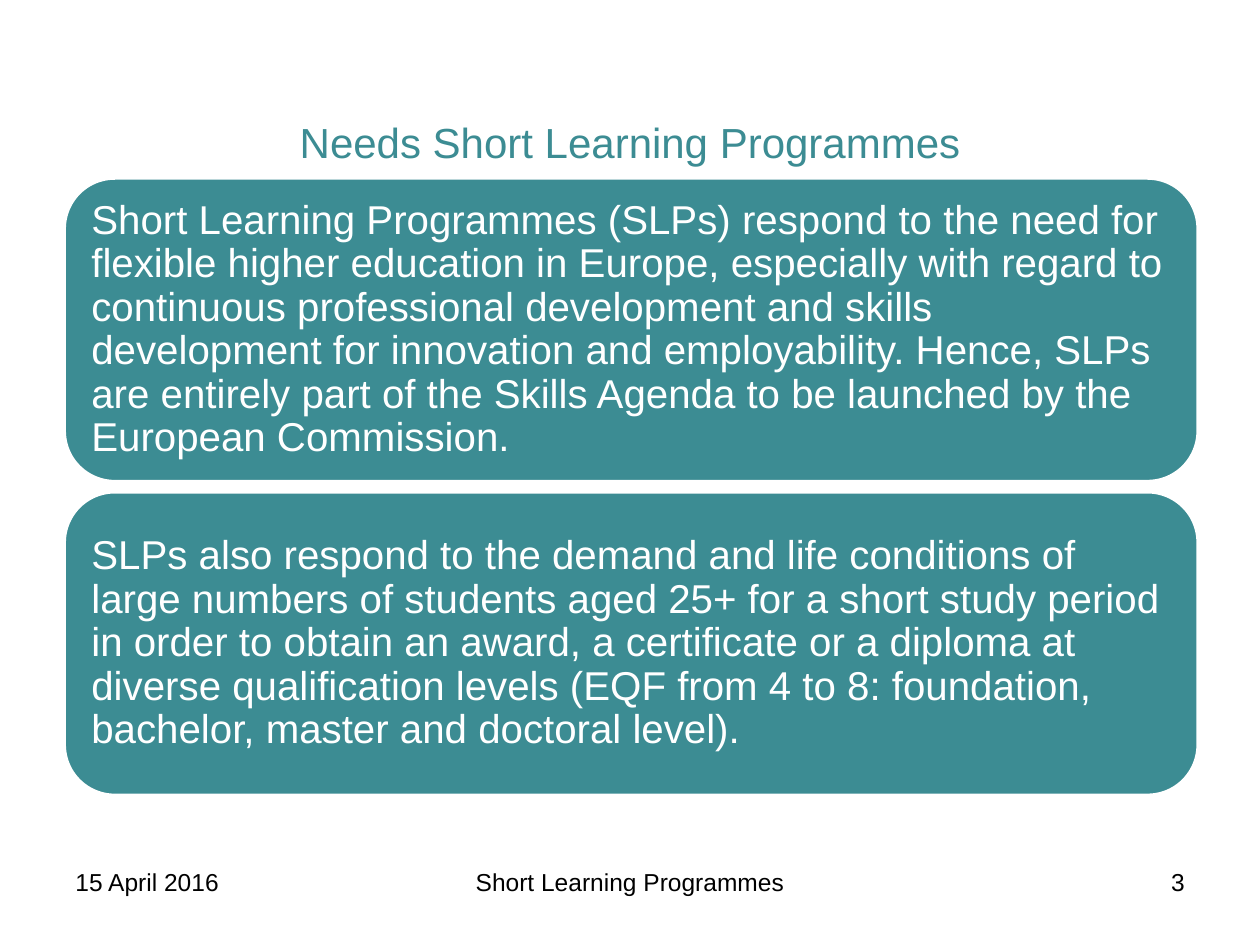
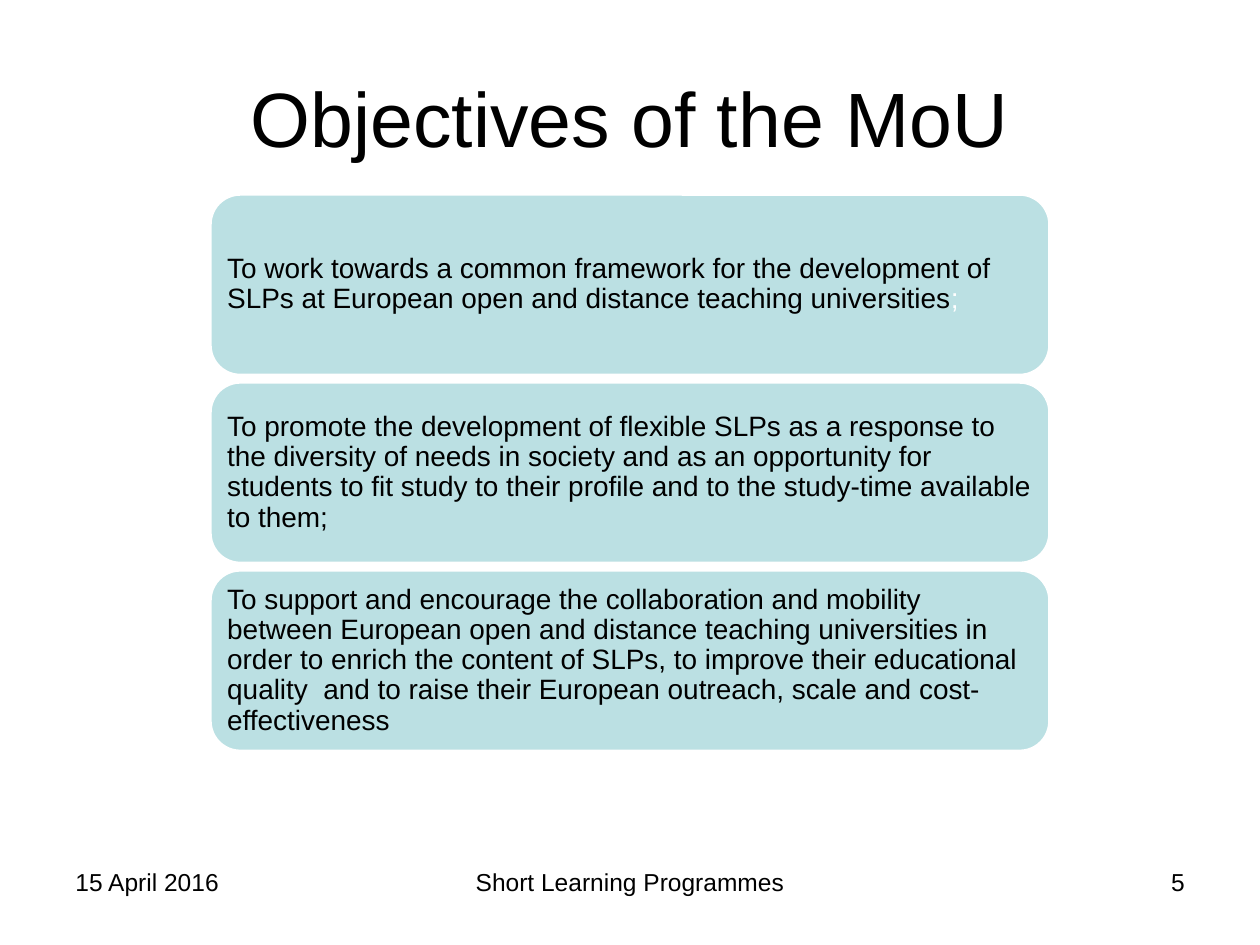
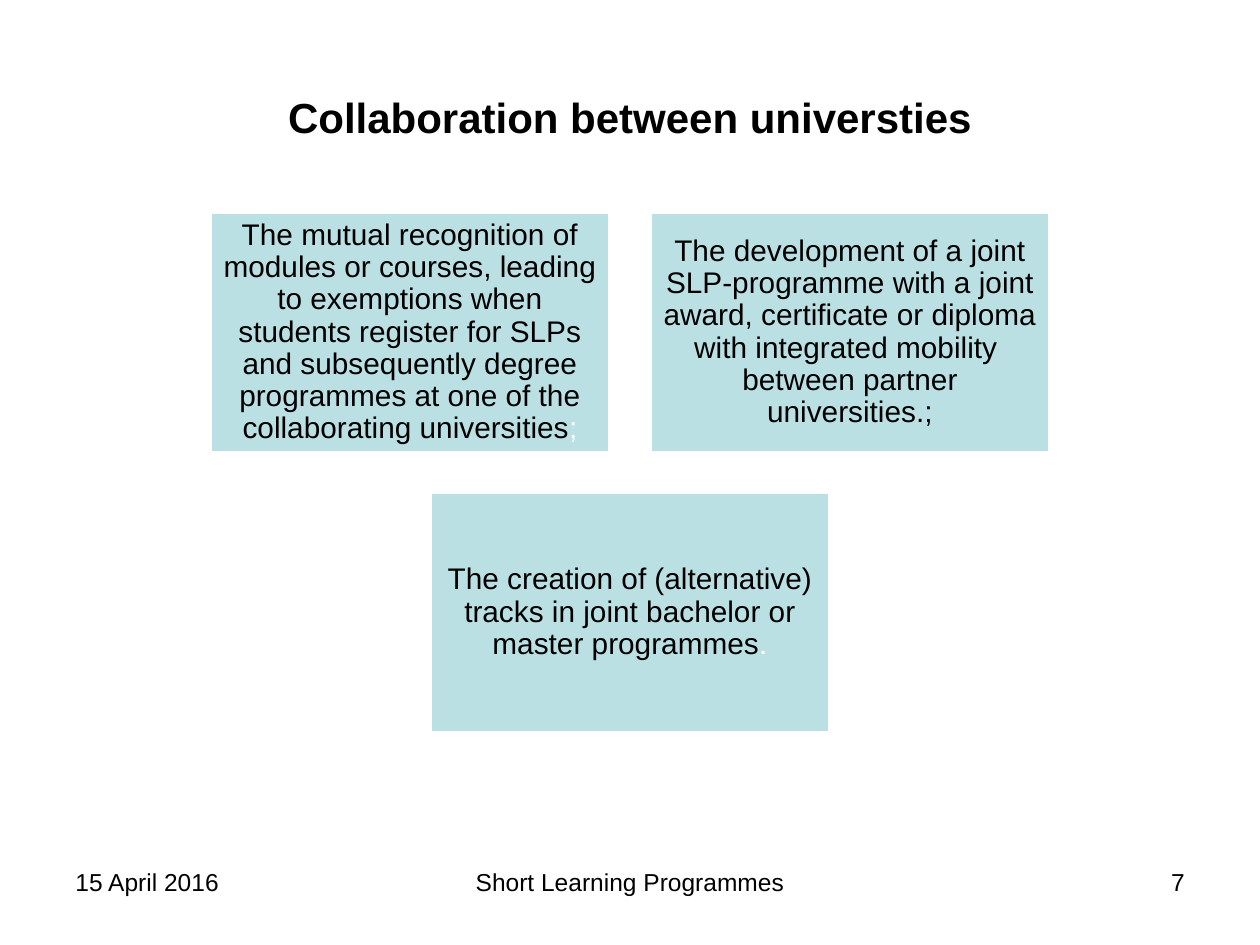
"""Build three slides on Short Learning Programmes with python-pptx."""
from pptx import Presentation
from pptx.dml.color import RGBColor
from pptx.enum.shapes import MSO_SHAPE as Preset
from pptx.enum.text import MSO_ANCHOR as Anchor, MSO_AUTO_SIZE as AutoSize, PP_ALIGN as Align
from pptx.util import Pt

TEAL = RGBColor(0x3C, 0x8C, 0x93)
PALE_TEAL = RGBColor(0xBB, 0xE0, 0xE3)
WHITE = RGBColor(0xFF, 0xFF, 0xFF)
BLACK = RGBColor(0x00, 0x00, 0x00)

FONT = "Arial"
SLIDE_WIDTH, SLIDE_HEIGHT = 720, 540
MARGIN = 36
TITLE_ONLY = 5

NEEDS = [
    [("Short Learning Programmes (SLPs) respond to the need for flexible higher "
      "education in Europe, especially with regard to continuous professional "
      "development and skills development for innovation and employability. Hence, "
      "SLPs are entirely part of the Skills Agenda to be launched by the European "
      "Commission.", WHITE)],
    [("SLPs also respond to the demand and life conditions of large numbers of "
      "students aged 25+ for a short study period in order to obtain an award, a "
      "certificate or a diploma at diverse qualification levels (EQF from 4 to 8: "
      "foundation, bachelor, master and doctoral level).", WHITE)],
]
OBJECTIVES = [
    [("To work towards a common framework for the development of SLPs at European "
      "open and distance teaching universities", BLACK), (";", WHITE)],
    [("To promote the development of flexible SLPs as a response to the diversity of "
      "needs in society and as an opportunity for students to fit study to their "
      "profile and to the study-time available to them;", BLACK)],
    [("To support and encourage the collaboration and mobility between European open "
      "and distance teaching universities in order to enrich the content of SLPs, to "
      "improve their educational quality  and to raise their European outreach, scale "
      "and cost-effectiveness", BLACK)],
]
COLLABORATION = [
    [("The mutual recognition of modules or courses, leading to exemptions when "
      "students register for SLPs and subsequently degree programmes at one of the "
      "collaborating universities", BLACK), (";", WHITE)],
    [("The development of a joint SLP-programme with a joint award, certificate or "
      "diploma with integrated mobility  between partner universities.;", BLACK)],
    [("The creation of (alternative) tracks in joint bachelor or master programmes",
      BLACK), (".", WHITE)],
]


def add_run(paragraph, text, size, color, bold=False):
    """Append one formatted run to a paragraph."""
    run = paragraph.add_run()
    run.text = text
    font = run.font
    font.name, font.size, font.bold = FONT, Pt(size), bold
    font.color.rgb = color


def add_title(slide, text, size=24, color=BLACK, bold=False, top_inset=3.6):
    """Place and fill the title placeholder."""
    title = slide.shapes.title
    title.left, title.top = Pt(MARGIN), Pt(21.6)
    title.width, title.height = Pt(SLIDE_WIDTH - 2 * MARGIN), Pt(90)
    frame = title.text_frame
    frame.auto_size = AutoSize.NONE
    frame.vertical_anchor = Anchor.MIDDLE
    frame.margin_top = Pt(top_inset)
    paragraph = frame.paragraphs[0]
    paragraph.alignment = Align.CENTER
    add_run(paragraph, text, size, color, bold)


def add_footer(slide, number):
    """Add the date, the running title and the slide number."""
    side, middle = 168, 228
    parts = [
        ("15 April 2016", MARGIN, side, Align.LEFT),
        ("Short Learning Programmes", (SLIDE_WIDTH - middle) / 2, middle, Align.CENTER),
        (str(number), SLIDE_WIDTH - MARGIN - side, side, Align.RIGHT),
    ]
    for text, left, width, alignment in parts:
        box = slide.shapes.add_textbox(Pt(left), Pt(491.8), Pt(width), Pt(37.5))
        box.text_frame.word_wrap = True
        paragraph = box.text_frame.paragraphs[0]
        paragraph.alignment = alignment
        add_run(paragraph, text, 14, BLACK)


def add_card(slide, preset, runs, box, fill, size, inset, alignment):
    """Add a filled card with its text inside."""
    card = slide.shapes.add_shape(preset, *[Pt(length) for length in box])
    card.shadow.inherit = False
    card.fill.solid()
    card.fill.fore_color.rgb = fill
    card.line.color.rgb = WHITE
    card.line.width = Pt(2)
    frame = card.text_frame
    frame.word_wrap = True
    frame.vertical_anchor = Anchor.MIDDLE
    frame.margin_left = frame.margin_right = Pt(inset)
    frame.margin_top = frame.margin_bottom = Pt(inset)
    paragraph = frame.paragraphs[0]
    paragraph.alignment = alignment
    paragraph.line_spacing = 0.9
    for text, color in runs:
        add_run(paragraph, text, size, color)


def add_stack(slide, items, left, top, width, height, gap, fill, size, inset):
    """Stack rounded cards at equal gaps."""
    for index, runs in enumerate(items):
        box = (left, top + index * (height + gap), width, height)
        add_card(slide, Preset.ROUNDED_RECTANGLE, runs, box, fill, size, inset, Align.LEFT)


def add_centred_grid(slide, items, columns, top, width, height, gap):
    """Lay out square-cornered cards in rows, each centred on the slide."""
    for start in range(0, len(items), columns):
        row = items[start:start + columns]
        left = (SLIDE_WIDTH - len(row) * (width + gap) + gap) / 2
        row_top = top + start // columns * (height + gap)
        for column, runs in enumerate(row):
            box = (left + column * (width + gap), row_top, width, height)
            add_card(slide, Preset.RECTANGLE, runs, box, PALE_TEAL, 17, 5, Align.CENTER)


def add_slide(presentation, number):
    """Add a title-only slide with its footer."""
    slide = presentation.slides.add_slide(presentation.slide_layouts[TITLE_ONLY])
    add_footer(slide, number)
    return slide


def main():
    """Build and save the presentation."""
    presentation = Presentation()
    presentation.slide_width, presentation.slide_height = Pt(SLIDE_WIDTH), Pt(SLIDE_HEIGHT)

    needs = add_slide(presentation, 3)
    add_title(needs, "Needs Short Learning Programmes", color=TEAL, top_inset=32)
    add_stack(needs, NEEDS, 36.7, 101.7, 648, 173.5, 5.8, TEAL, 23, 7.2)

    objectives = add_slide(presentation, 5)
    add_title(objectives, "Objectives of the MoU", size=44)
    add_stack(objectives, OBJECTIVES, 120, 110.9, 480, 103.7, 3.7, PALE_TEAL, 16, 4.8)

    collaboration = add_slide(presentation, 7)
    add_title(collaboration, "Collaboration between universties", bold=True)
    add_centred_grid(collaboration, COLLABORATION, 2, 121.4, 228.57, 137.14, 22.86)

    presentation.save("out.pptx")


if __name__ == "__main__":
    main()
